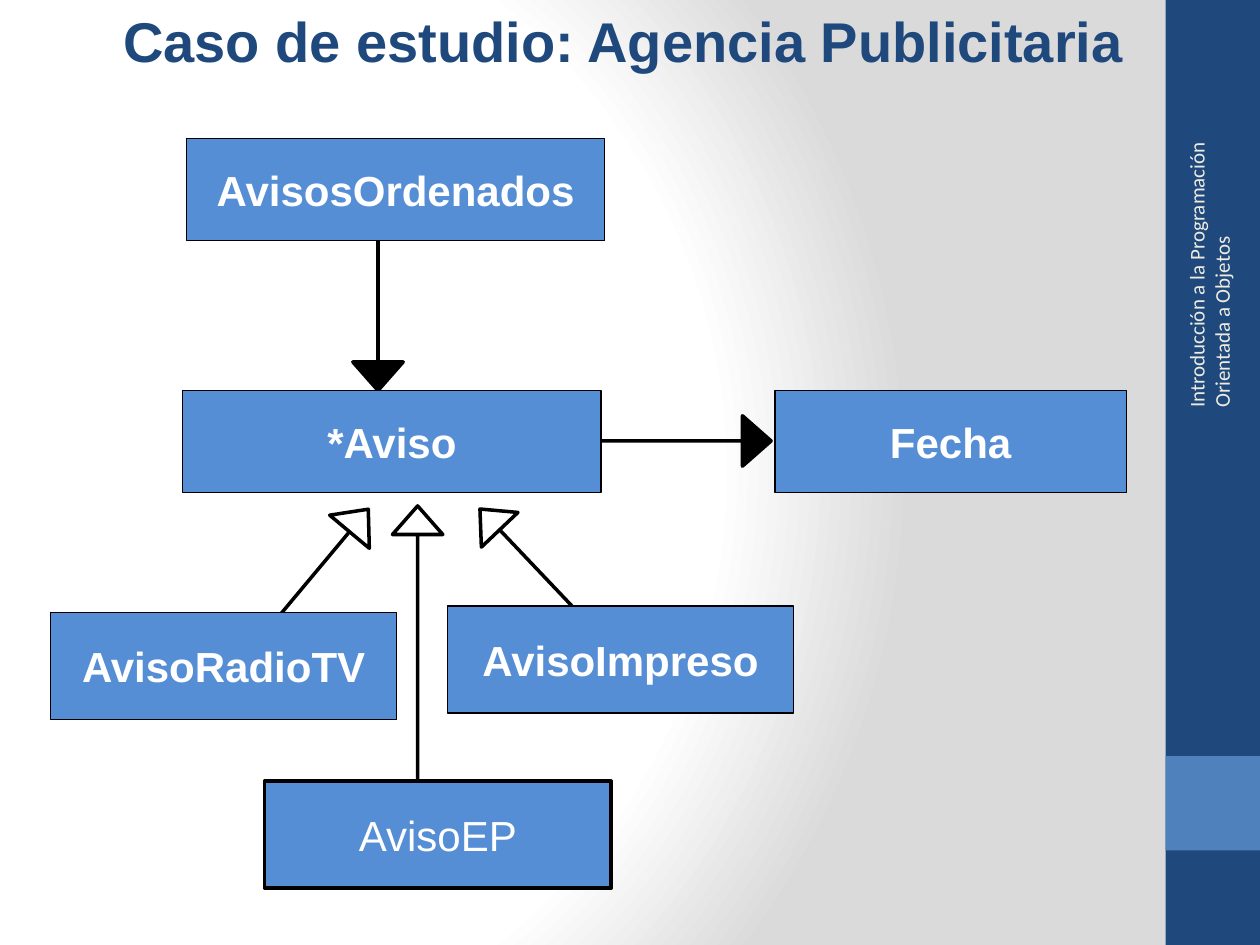
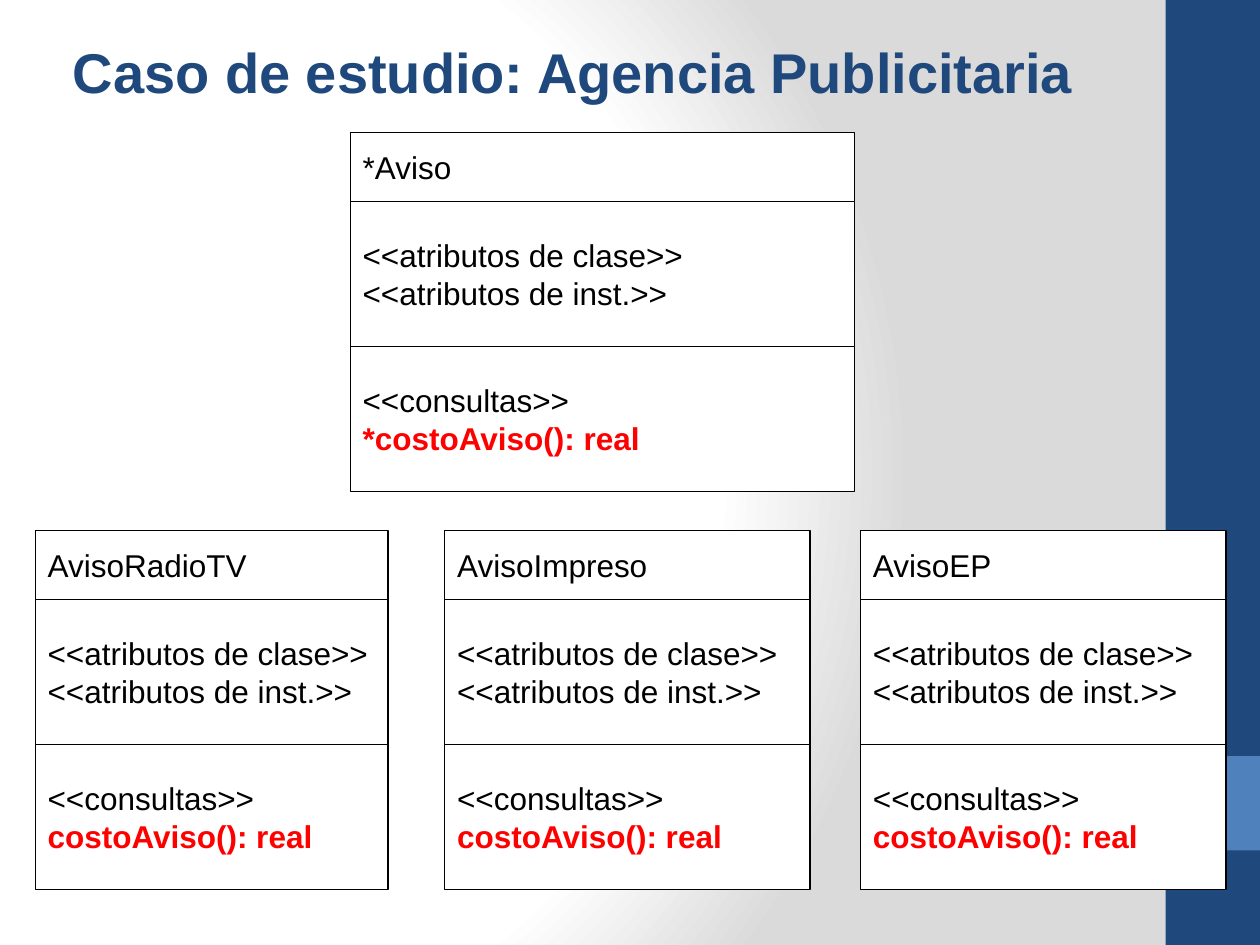
from lxml import etree
from pptx import Presentation
from pptx.dml.color import RGBColor
from pptx.enum.shapes import MSO_SHAPE
from pptx.enum.text import MSO_ANCHOR, PP_ALIGN
from pptx.oxml.ns import qn
from pptx.util import Pt

PX = 9144  # EMU per px, 100 px to the inch
RECTANGLE, ARROW = MSO_SHAPE.RECTANGLE, MSO_SHAPE.RIGHT_ARROW
MIDDLE, LEFT, CENTER = MSO_ANCHOR.MIDDLE, PP_ALIGN.LEFT, PP_ALIGN.CENTER

COLORS = {
    "navy": "1F497D", "band": "4F81BD", "class": "558ED5", "cream": "EEECE1",
    "white": "FFFFFF", "black": "000000", "red": "FF0000", "gray": "DADADA",
}
TITLE = "Caso de estudio: Agencia Publicitaria"
COURSE = "Introducción a la Programación Orientada a Objetos"
ROW_HEIGHTS = (55, 115, 115)

# name, box, bold, line width in points
CLASSES = [
    ("AvisoImpreso", (355, 481, 275, 85), True, 0.75),
    ("AvisoRadioTV", (40, 486, 275, 85), True, 0.75),
    ("Fecha", (615, 310, 279, 81), True, 0.75),
    ("AvisoEP", (210, 620, 275, 85), False, 2),
    ("AvisosOrdenados", (148, 110, 332, 81), True, 0.75),
    ("*Aviso", (145, 310, 332, 81), True, 0.75),
]
# box before rotation, angle, fill
INHERITANCE = [
    ((161, 445, 160, 41), 309.9, None),
    ((356, 442, 160, 40), 226.5, None),
    ((223, 490, 217, 40), 270, "white"),
]
ASSOCIATIONS = [
    ((220, 210, 160, 40), 90, "black"),
    ((452, 330, 160, 40), 0, "black"),
]
# name, left, top, width, prefix of the abstract method
CLASS_CARDS = [
    ("*Aviso", 278, 105, 400, "*"),
    ("AvisoRadioTV", 28, 421, 280, ""),
    ("AvisoEP", 683, 421, 290, ""),
    ("AvisoImpreso", 353, 421, 290, ""),
]


def rgb(name):
    return RGBColor.from_string(COLORS[name])


def emu(box):
    return [length * PX for length in box]


def set_font(paragraph, size, color, bold=False, family="Arial"):
    font = paragraph.font
    font.name, font.size, font.bold = family, Pt(size), bold
    font.color.rgb = rgb(color)


def add_figure(slide, kind, box, fill=None, line_width=None):
    """Add a flat preset shape; without a line width it has no outline."""
    figure = slide.shapes.add_shape(kind, *emu(box))
    figure.shadow.inherit = False
    if fill:
        figure.fill.solid()
        figure.fill.fore_color.rgb = rgb(fill)
    else:
        figure.fill.background()
    if line_width:
        figure.line.color.rgb = rgb("black")
        figure.line.width = Pt(line_width)
    else:
        figure.line.fill.background()
    return figure


def write_lines(figure, lines, size, align):
    """Fill a figure with (text, color, bold) lines."""
    frame = figure.text_frame
    frame.word_wrap = False
    frame.vertical_anchor = MIDDLE
    for index, (text, color, bold) in enumerate(lines):
        paragraph = frame.paragraphs[0] if index == 0 else frame.add_paragraph()
        paragraph.text = text
        paragraph.alignment = align
        set_font(paragraph, size, color, bold)


def add_label(slide, box, text):
    label = slide.shapes.add_textbox(*emu(box))
    frame = label.text_frame
    frame.word_wrap = True
    frame.vertical_anchor = MIDDLE
    frame.text = text
    return label


def add_title(slide, left, top):
    title = add_label(slide, (left, top, 950, 66), TITLE)
    title.text_frame.margin_bottom = 56 * PX  # lifts the line half its height
    paragraph = title.text_frame.paragraphs[0]
    paragraph.alignment = CENTER
    set_font(paragraph, 32, "navy", True)


def add_sidebar(slide):
    add_figure(slide, RECTANGLE, (925, 0, 75, 750), "navy")
    add_figure(slide, RECTANGLE, (925, 600, 75, 75), "band")


def add_course_name(slide):
    course = add_label(slide, (826, 180, 267, 40), COURSE)
    course.rotation = 270
    set_font(course.text_frame.paragraphs[0], 12, "cream", family="Calibri")


def set_background(master):
    """Give the master a radial gradient from white to gray."""
    master.background.fill.solid()
    properties = master._element.find(".//" + qn("p:bgPr"))
    gradient = etree.Element(qn("a:gradFill"), rotWithShape="1")
    stops = etree.SubElement(gradient, qn("a:gsLst"))
    for percent, color in ((0, "white"), (75, "white"), (100, "gray")):
        stop = etree.SubElement(stops, qn("a:gs"), pos=str(percent * 1000))
        etree.SubElement(stop, qn("a:srgbClr"), val=COLORS[color])
    circle = etree.SubElement(gradient, qn("a:path"), path="circle")
    etree.SubElement(circle, qn("a:fillToRect"),
                     l="20000", t="50000", r="100000", b="50000")
    properties.replace(properties[0], gradient)


def add_relation(slide, box, angle, fill):
    """Add an arrow whose shaft is a single line."""
    arrow = add_figure(slide, ARROW, box, fill, 2)
    arrow.adjustments[0] = 0
    arrow.adjustments[1] = 0.567
    arrow.rotation = angle


def add_class_card(slide, name, left, top, width, prefix):
    """Stack the name, attribute and query compartments of a class."""
    compartments = (
        [(name, "black", False)],
        [("<<atributos de clase>>", "black", False),
         ("<<atributos de inst.>>", "black", False)],
        [("<<consultas>>", "black", False),
         (prefix + "costoAviso(): real", "red", True)],
    )
    for lines, height in zip(compartments, ROW_HEIGHTS):
        box = (left, top, width, height)
        compartment = add_figure(slide, RECTANGLE, box, "white", 0.75)
        write_lines(compartment, lines, 18, LEFT)
        top += height


def build_class_diagram(slide):
    add_sidebar(slide)
    add_course_name(slide)
    add_title(slide, 20, 24)
    for relation in INHERITANCE + ASSOCIATIONS:
        add_relation(slide, *relation)
    for name, box, bold, line_width in CLASSES:
        node = add_figure(slide, RECTANGLE, box, "class", line_width)
        write_lines(node, [(name, "white", bold)], 24, CENTER)


def build_class_details(slide):
    add_sidebar(slide)
    for card in CLASS_CARDS:
        add_class_card(slide, *card)
    add_title(slide, -20, 49)


def main():
    prs = Presentation()
    prs.slide_width, prs.slide_height = emu((1000, 750))
    set_background(prs.slide_master)
    blank = prs.slide_layouts[6]
    for build in (build_class_diagram, build_class_details):
        build(prs.slides.add_slide(blank))
    prs.save("out.pptx")


if __name__ == "__main__":
    main()
